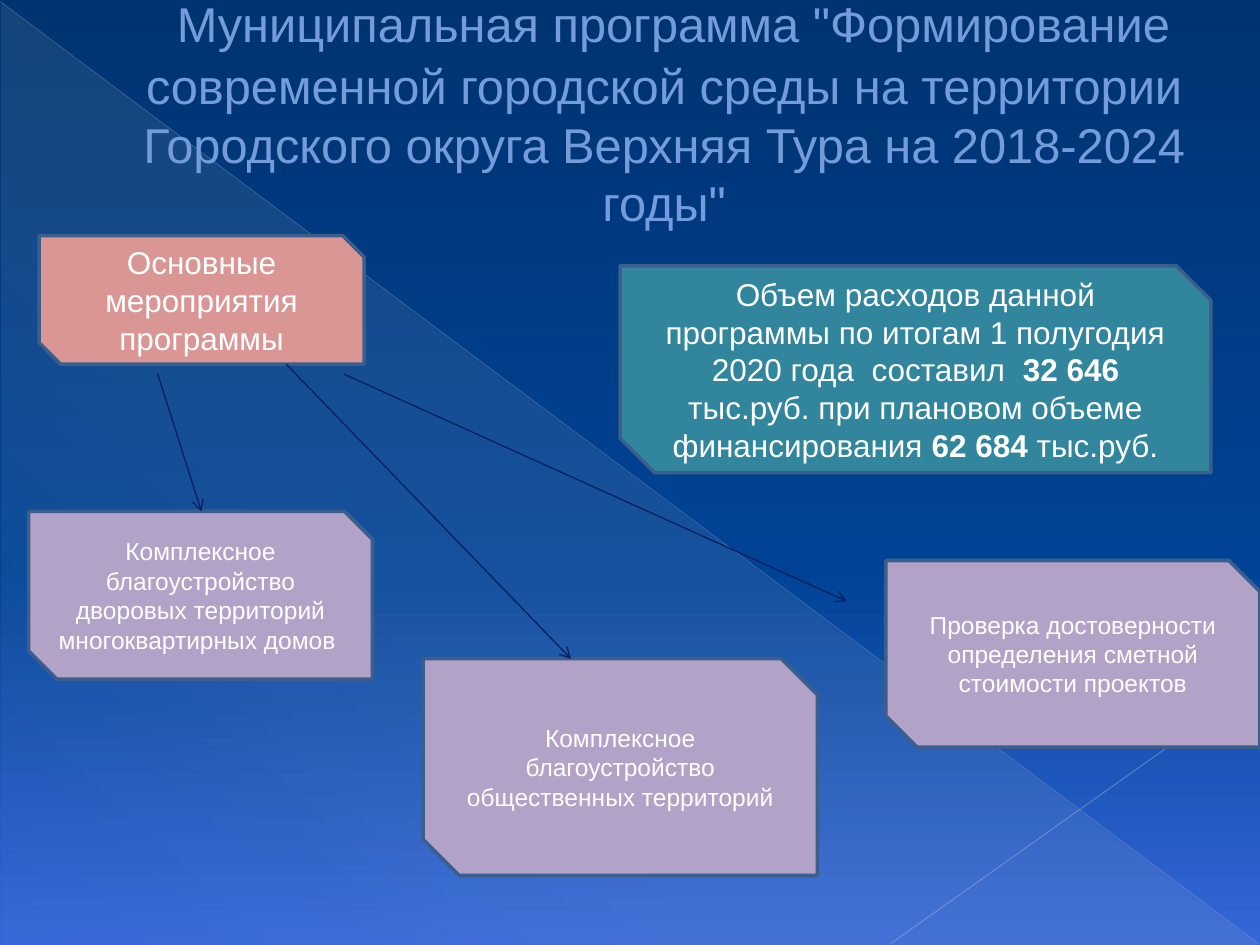
"""Build the slide on the municipal urban environment programme."""
from lxml import etree
from pptx import Presentation
from pptx.dml.color import RGBColor
from pptx.enum.shapes import MSO_CONNECTOR as Connector, MSO_SHAPE as Shape
from pptx.enum.text import MSO_ANCHOR as Anchor, MSO_AUTO_SIZE as AutoSize, PP_ALIGN as Align
from pptx.oxml.ns import qn
from pptx.util import Cm, Pt

NIGHT = RGBColor(0x00, 0x33, 0x71)
COBALT = RGBColor(0x00, 0x43, 0x96)
AZURE = RGBColor(0x35, 0x66, 0xD7)
CREAM = RGBColor(0xEE, 0xEC, 0xE1)
MIST = RGBColor(0xAD, 0xB6, 0xCE)
PALE_MIST = RGBColor(0xB6, 0xBE, 0xD3)
TITLE_BLUE = RGBColor(0x74, 0x9C, 0xDB)
TITLE_EDGE = RGBColor(0x37, 0x59, 0x83)
BORDER = RGBColor(0x3A, 0x5F, 0x8C)
ARROW = RGBColor(0x00, 0x20, 0x60)
ROSE = RGBColor(0xD9, 0x96, 0x94)
LILAC = RGBColor(0xB3, 0xA2, 0xC7)
TEAL = RGBColor(0x31, 0x85, 0x9C)
WHITE = RGBColor(0xFF, 0xFF, 0xFF)


def add_node(parent, tag, **attributes):
    node = etree.SubElement(parent, qn(tag))
    for key, value in attributes.items():
        node.set(key, str(value))
    return node


def set_alpha(color_node, percent):
    add_node(color_node, "a:alpha", val=percent * 1000)


def add_color(parent, color, opacity=100):
    node = add_node(parent, "a:srgbClr", val=color)
    if opacity < 100:
        set_alpha(node, opacity)


def paint_gradient(fill, owner, stops, angle):
    fill.gradient()
    fill.gradient_angle = 360 - angle
    stop_list = next(owner.iter(qn("a:gsLst")))
    for stop in list(stop_list):
        stop_list.remove(stop)
    for position, color, opacity in stops:
        add_color(add_node(stop_list, "a:gs", pos=position * 1000), color, opacity)


def write_text(paragraph, text, size=18, color=WHITE, font="Arial", bold=False, edge=None):
    run = paragraph.add_run()
    run.text = text
    run.font.size = Pt(size)
    run.font.name = font
    run.font.bold = bold
    run.font.color.rgb = color
    if edge:
        outline = etree.Element(qn("a:ln"), w=str(Pt(0.5)))
        add_color(add_node(outline, "a:solidFill"), edge)
        run.font._element.insert(0, outline)


class ProgrammeSlide:
    """Holds the slide and the shared style of its elements."""

    def __init__(self, deck, border_width=2, arrow_width=0.75):
        self.slide = deck.slides.add_slide(deck.slide_layouts[5])
        self.border_width = border_width
        self.arrow_width = arrow_width

    def backdrop(self):
        paint_gradient(self.slide.background.fill, self.slide.element,
                       [(0, NIGHT, 100), (60, COBALT, 100), (100, AZURE, 100)], 90)
        glow = self.slide.shapes.add_shape(
            Shape.RIGHT_TRIANGLE, Cm(0.03), Cm(0.05), Cm(25.35), Cm(19))
        glow.shadow.inherit = False
        glow.line.fill.background()
        paint_gradient(glow.fill, glow._element.spPr,
                       [(0, CREAM, 10), (70, CREAM, 8), (100, CREAM, 1)], 133)
        self.line((0, 0.03), (25.37, 19.02), MIST, 0.39, opacity=35)
        self.line((25.4, 13.74), (17.96, 19.02), PALE_MIST, 0.47, opacity=45)

    def line(self, start, end, color, width, opacity=100):
        connector = self.slide.shapes.add_connector(
            Connector.STRAIGHT, *(Cm(value) for value in start + end))
        connector.line.color.rgb = color
        connector.line.width = Pt(width)
        if opacity < 100:
            set_alpha(next(connector._element.spPr.iter(qn("a:srgbClr"))), opacity)
        add_node(connector._element.spPr, "a:effectLst")
        return connector

    def arrow(self, start, end):
        connector = self.line(start, end, ARROW, self.arrow_width)
        add_node(connector.line._get_or_add_ln(), "a:tailEnd", type="arrow")

    def title(self, text):
        heading = self.slide.shapes.title
        heading.left, heading.top, heading.width, heading.height = (
            Cm(0.41), Cm(0.41), Cm(24.61), Cm(3.38))
        frame = heading.text_frame
        frame.word_wrap = True
        frame.auto_size = AutoSize.NONE
        frame.vertical_anchor = Anchor.MIDDLE
        paragraph = frame.paragraphs[0]
        paragraph.alignment = Align.CENTER
        indent = paragraph._p.get_or_add_pPr()
        indent.set("marL", str(Cm(1.35)))
        indent.set("indent", "0")
        write_text(paragraph, " ", size=37.8, color=TITLE_BLUE,
                   font="TeX Gyre Adventor", edge=TITLE_EDGE)
        write_text(paragraph, text, size=27.9, color=TITLE_BLUE, edge=TITLE_EDGE)
        self.slide.shapes._spTree.append(heading._element)

    def card(self, place, color, parts, size=18):
        card = self.slide.shapes.add_shape(
            Shape.SNIP_2_DIAG_RECTANGLE, *(Cm(value) for value in place))
        card.shadow.inherit = False
        card.fill.solid()
        card.fill.fore_color.rgb = color
        card.line.color.rgb = BORDER
        card.line.width = Pt(self.border_width)
        frame = card.text_frame
        frame.word_wrap = True
        frame.vertical_anchor = Anchor.MIDDLE
        paragraph = frame.paragraphs[0]
        paragraph.alignment = Align.CENTER
        for text, bold in parts:
            write_text(paragraph, text, size=size, bold=bold)


def main():
    deck = Presentation()
    deck.slide_width, deck.slide_height = Cm(25.4), Cm(19.05)
    programme = ProgrammeSlide(deck)
    programme.backdrop()
    programme.title('Муниципальная программа "Формирование современной городской среды '
                    'на территории Городского округа Верхняя Тура на 2018-2024 годы"')

    programme.card((0.79, 4.75, 6.55, 2.59), ROSE, [("Основные мероприятия программы", False)])
    measures = [
        ((0.58, 10.31, 6.93, 3.38),
         "Комплексное благоустройство дворовых территорий многоквартирных домов "),
        ((8.53, 13.28, 7.95, 4.37), "Комплексное благоустройство общественных территорий"),
        ((17.86, 11.3, 7.54, 3.76),
         "Проверка достоверности определения сметной стоимости проектов"),
    ]
    for place, measure in measures:
        programme.card(place, LILAC, [(measure, False)], size=14)
    programme.card((12.5, 5.36, 11.91, 4.17), TEAL, [
        ("Объем расходов данной программы по итогам 1 полугодия 2020 года  составил  ", False),
        ("32 646 ", True),
        ("тыс.руб. при плановом объеме финансирования ", False),
        ("62 684 ", True),
        ("тыс.руб.", False),
    ])

    for start, end in [((5.77, 7.34), (11.51, 13.28)),
                       ((3.18, 7.54), (4.06, 10.31)),
                       ((6.93, 7.54), (17.07, 12.12))]:
        programme.arrow(start, end)
    deck.save("out.pptx")


if __name__ == "__main__":
    main()
